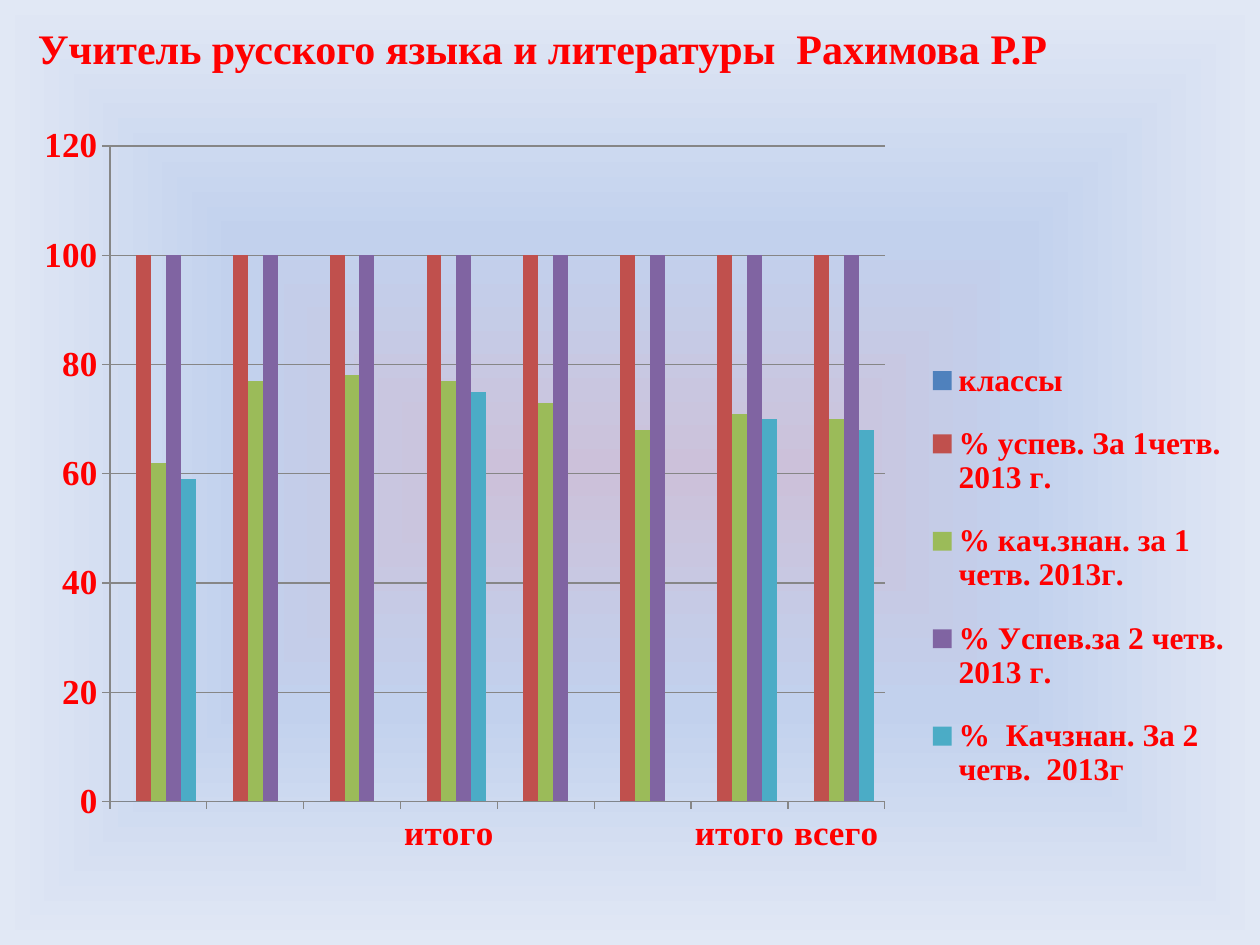
import pptx
import pptx.util
import pptx.oxml
import pptx.oxml.ns
import pptx.chart.data
import pptx.dml.color
import pptx.enum.chart
import pptx.enum.text

Inches, Pt = pptx.util.Inches, pptx.util.Pt
RGB = pptx.dml.color.RGBColor.from_string
HUES = {"text": "FF0000", "line": "868686", "inner": "CCC1DA",
        "mid": "C2D1ED", "outer": "E1E8F5"}
FACE = "Times New Roman"


def style(font, size):
    font.name = FACE
    font.size = Pt(size)
    font.bold = True
    font.color.rgb = RGB(HUES["text"])


def place(part, index, x, y, w, h, inner=False):
    """Give a chart part a fixed place, in fractions of the chart."""
    for old in part.findall(pptx.oxml.ns.qn("c:layout")):
        part.remove(old)
    target = '<c:layoutTarget val="inner"/>' if inner else ""
    part.insert(index, pptx.oxml.parse_xml(
        f'<c:layout {pptx.oxml.ns.nsdecls("c")}><c:manualLayout>{target}'
        '<c:xMode val="edge"/><c:yMode val="edge"/>'
        f'<c:x val="{x}"/><c:y val="{y}"/><c:w val="{w}"/><c:h val="{h}"/>'
        '</c:manualLayout></c:layout>'))


deck = pptx.Presentation()
deck.slide_width, deck.slide_height = Inches(10), Inches(7.5)
slide = deck.slides.add_slide(deck.slide_layouts[5])

# Background: gradient spreading from the centre
slide.background.fill.gradient()
grad = slide.element.xpath(".//p:bgPr/a:gradFill")[0]
stops = "".join(
    f'<a:gs pos="{pos * 1000}"><a:srgbClr val="{HUES[name]}"/></a:gs>'
    for pos, name in ((0, "inner"), (50, "mid"), (100, "outer")))
grad.getparent().replace(grad, pptx.oxml.parse_xml(
    f'<a:gradFill {pptx.oxml.ns.nsdecls("a")} rotWithShape="1">'
    f'<a:gsLst>{stops}</a:gsLst><a:path path="shape">'
    '<a:fillToRect l="50000" t="50000" r="50000" b="50000"/>'
    '</a:path></a:gradFill>'))

# Title
title = slide.shapes.title
title.left, title.top = Inches(0.2), Inches(0.13)
title.width, title.height = Inches(9.45), Inches(0.5)
frame = title.text_frame
frame.word_wrap = True
frame.auto_size = pptx.enum.text.MSO_AUTO_SIZE.NONE
frame.vertical_anchor = pptx.enum.text.MSO_ANCHOR.TOP
para = frame.paragraphs[0]
para.alignment = pptx.enum.text.PP_ALIGN.LEFT
run = para.add_run()
run.text = "Учитель русского языка и литературы  Рахимова Р.Р"
style(run.font, 24)

# Chart data
rows = [
    ("классы", "4F81BD", (0, 0, 0, None, 0, 0, None, None)),
    ("% успев. За 1четв. 2013 г.", "C0504D", (100,) * 8),
    ("% кач.знан. за 1 четв. 2013г.", "9BBB59",
     (62, 77, 78, 77, 73, 68, 71, 70)),
    ("% Успев.за 2 четв. 2013 г.", "8064A2", (100,) * 8),
    ("%  Качзнан. За 2 четв.  2013г", "4BACC6",
     (59, None, None, 75, None, None, 70, 68)),
]
data = pptx.chart.data.CategoryChartData()
data.categories = ["", "", "", "итого", "", "", "итого", "всего"]
for name, hue, vals in rows:
    data.add_series(name, vals)

# Chart and its columns
chart = slide.shapes.add_chart(
    pptx.enum.chart.XL_CHART_TYPE.COLUMN_CLUSTERED,
    Inches(0.2), Inches(0.92), Inches(9.61), Inches(5.98), data).chart
chart.has_title = False
chart.font.name, chart.font.size = "Calibri", Pt(10)
plot = chart.plots[0]
plot.gap_width, plot.overlap = 150, 0
plot.vary_by_categories = False
for series, (name, hue, vals) in zip(plot.series, rows):
    series.format.fill.solid()
    series.format.fill.fore_color.rgb = RGB(hue)
    series.invert_if_negative = False

# Axes
cats, scale = chart.category_axis, chart.value_axis
scale.minimum_scale, scale.maximum_scale, scale.major_unit = 0, 120, 20
scale.has_major_gridlines = True
for axis in (cats, scale):
    style(axis.tick_labels.font, 20)
    axis.major_tick_mark = pptx.enum.chart.XL_TICK_MARK.OUTSIDE
    axis.minor_tick_mark = pptx.enum.chart.XL_TICK_MARK.NONE
for item in (cats, scale, scale.major_gridlines):
    item.format.line.color.rgb = RGB(HUES["line"])
    item.format.line.width = Pt(0.75)

# Legend
chart.has_legend = True
key = chart.legend
key.position = pptx.enum.chart.XL_LEGEND_POSITION.RIGHT
key.include_in_layout = False
style(key.font, 18)

# Fixed places of plot area and legend
space = chart.element.xpath(".//c:plotArea")[0]
place(space, 0, 0.07, 0.04, 0.64, 0.87, inner=True)
place(chart.element.xpath(".//c:legend")[0], 1, 0.74, 0.29, 0.26, 0.64)

deck.save("out.pptx")
